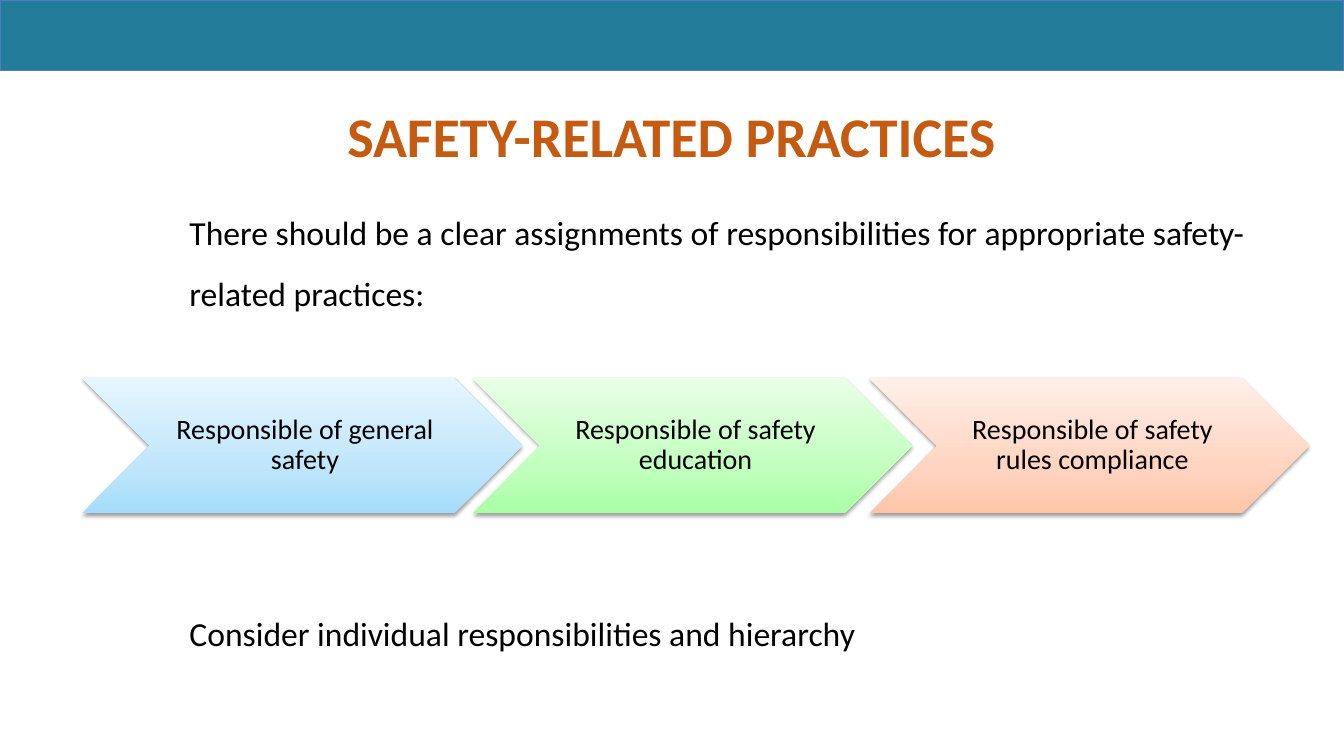
"""Build the safety-related practices slide with its three responsibility chevrons."""
from copy import deepcopy
from dataclasses import dataclass, field

from lxml.etree import SubElement
from pptx import Presentation
from pptx.dml.color import RGBColor
from pptx.enum.shapes import MSO_SHAPE
from pptx.enum.text import MSO_ANCHOR, PP_ALIGN
from pptx.oxml.ns import qn
from pptx.util import Emu, Pt

PX = 9525
COLORS = {
    "bar": "237C9A",
    "bar_line": "4B7EBC",
    "title": "C55A11",
    "text": "000000",
    "shadow": "000000",
}
GRADIENT_POSITIONS = (0, 0.35, 1)
CHEVRON_TOP, CHEVRON_WIDTH, CHEVRON_HEIGHT = 360, 419, 129


@dataclass
class Line:
    text: str
    font: dict
    color: str = "text"
    layout: dict = field(default_factory=dict)
    indent: int = 0


@dataclass
class TextBox:
    left: int
    top: int
    width: int
    height: int
    lines: list[Line]
    frame: dict = field(default_factory=dict)


@dataclass
class Chevron:
    left: int
    label: str
    shades: tuple[str, str, str]


BODY_FONT = {"name": "Calibri", "size": Pt(24)}
BODY_LAYOUT = {"line_spacing": 1.5}
LABEL_FONT = {"name": "Calibri", "size": Pt(20)}
LABEL_LAYOUT = {"alignment": PP_ALIGN.CENTER, "line_spacing": 0.9}
LABEL_FRAME = {
    "word_wrap": True,
    "vertical_anchor": MSO_ANCHOR.MIDDLE,
    "margin_left": Emu(9 * PX),
    "margin_right": Emu(3 * PX),
    "margin_top": Emu(3 * PX),
    "margin_bottom": Emu(3 * PX),
}

TEXT_BOXES = [
    TextBox(75, 178, 1130, 425, [
        Line("There should be a clear assignments of responsibilities "
             "for appropriate safety-related practices:",
             BODY_FONT, layout=BODY_LAYOUT, indent=96),
        Line("Consider individual responsibilities and hierarchy",
             BODY_FONT, layout={**BODY_LAYOUT, "space_before": Pt(200)}, indent=96),
    ], {"word_wrap": True, "margin_bottom": 0}),
    TextBox(92, 92, 1095, 74, [
        Line("SAFETY-RELATED PRACTICES",
             {"name": "Calibri", "size": Pt(40), "bold": True},
             "title", {"alignment": PP_ALIGN.CENTER}),
    ], {"word_wrap": True}),
]
CHEVRONS = [
    Chevron(78, "Responsible of general safety", ("A4DDFB", "C0E6FB", "E6F6FF")),
    Chevron(450, "Responsible of safety education", ("A9FFA4", "C2FFBF", "E8FFE6")),
    Chevron(828, "Responsible of safety rules compliance", ("FFC4A9", "FFD5C2", "FFEFE8")),
]


def px(*lengths: int) -> list[Emu]:
    return [Emu(length * PX) for length in lengths]


def apply(target, values: dict) -> None:
    for name, value in values.items():
        setattr(target, name, value)


def write(frame, lines: list[Line]) -> None:
    for index, line in enumerate(lines):
        para = frame.add_paragraph() if index else frame.paragraphs[0]
        apply(para, line.layout)
        if line.indent:
            properties = para._p.get_or_add_pPr()
            properties.set("marL", str(line.indent * PX))
            properties.set("indent", "0")
        span = para.add_run()
        span.text = line.text
        apply(span.font, line.font)
        span.font.color.rgb = RGBColor.from_string(COLORS[line.color])


def draw_bar(page) -> None:
    bar = page.shapes.add_shape(MSO_SHAPE.RECTANGLE, *px(0, 0, 1280, 67))
    bar.shadow.inherit = False
    bar.fill.solid()
    bar.fill.fore_color.rgb = RGBColor.from_string(COLORS["bar"])
    bar.line.color.rgb = RGBColor.from_string(COLORS["bar_line"])
    bar.line.width = Pt(0.75)


def draw_text(page, item: TextBox) -> None:
    box = page.shapes.add_textbox(*px(item.left, item.top, item.width, item.height))
    apply(box.text_frame, item.frame)
    write(box.text_frame, item.lines)


def shade(shape, shades: tuple[str, str, str]) -> None:
    shape.fill.gradient()
    shape.fill.gradient_angle = 90
    stop_list = shape._element.spPr.find(qn("a:gradFill")).find(qn("a:gsLst"))
    stop_list.append(deepcopy(stop_list[-1]))
    for stop, position, color in zip(shape.fill.gradient_stops, GRADIENT_POSITIONS, shades):
        stop.position = position
        stop.color.rgb = RGBColor.from_string(color)


def cast_shadow(shape) -> None:
    shape.shadow.inherit = False
    effects = shape._element.spPr.find(qn("a:effectLst"))
    shadow = SubElement(effects, qn("a:outerShdw"), blurRad="40000", dist="20000",
                        dir="5400000", rotWithShape="0")
    color = SubElement(shadow, qn("a:srgbClr"), val=COLORS["shadow"])
    SubElement(color, qn("a:alpha"), val="38000")


def draw_chevron(page, item: Chevron) -> None:
    shape = page.shapes.add_shape(
        MSO_SHAPE.CHEVRON, *px(item.left, CHEVRON_TOP, CHEVRON_WIDTH, CHEVRON_HEIGHT))
    shade(shape, item.shades)
    shape.line.fill.background()
    cast_shadow(shape)
    apply(shape.text_frame, LABEL_FRAME)
    write(shape.text_frame, [Line(item.label, LABEL_FONT, layout=LABEL_LAYOUT)])


def main() -> None:
    deck = Presentation()
    deck.slide_width, deck.slide_height = px(1280, 720)
    page = deck.slides.add_slide(deck.slide_layouts[6])
    draw_bar(page)
    for item in TEXT_BOXES:
        draw_text(page, item)
    for item in CHEVRONS:
        draw_chevron(page, item)
    deck.save("out.pptx")


if __name__ == "__main__":
    main()
